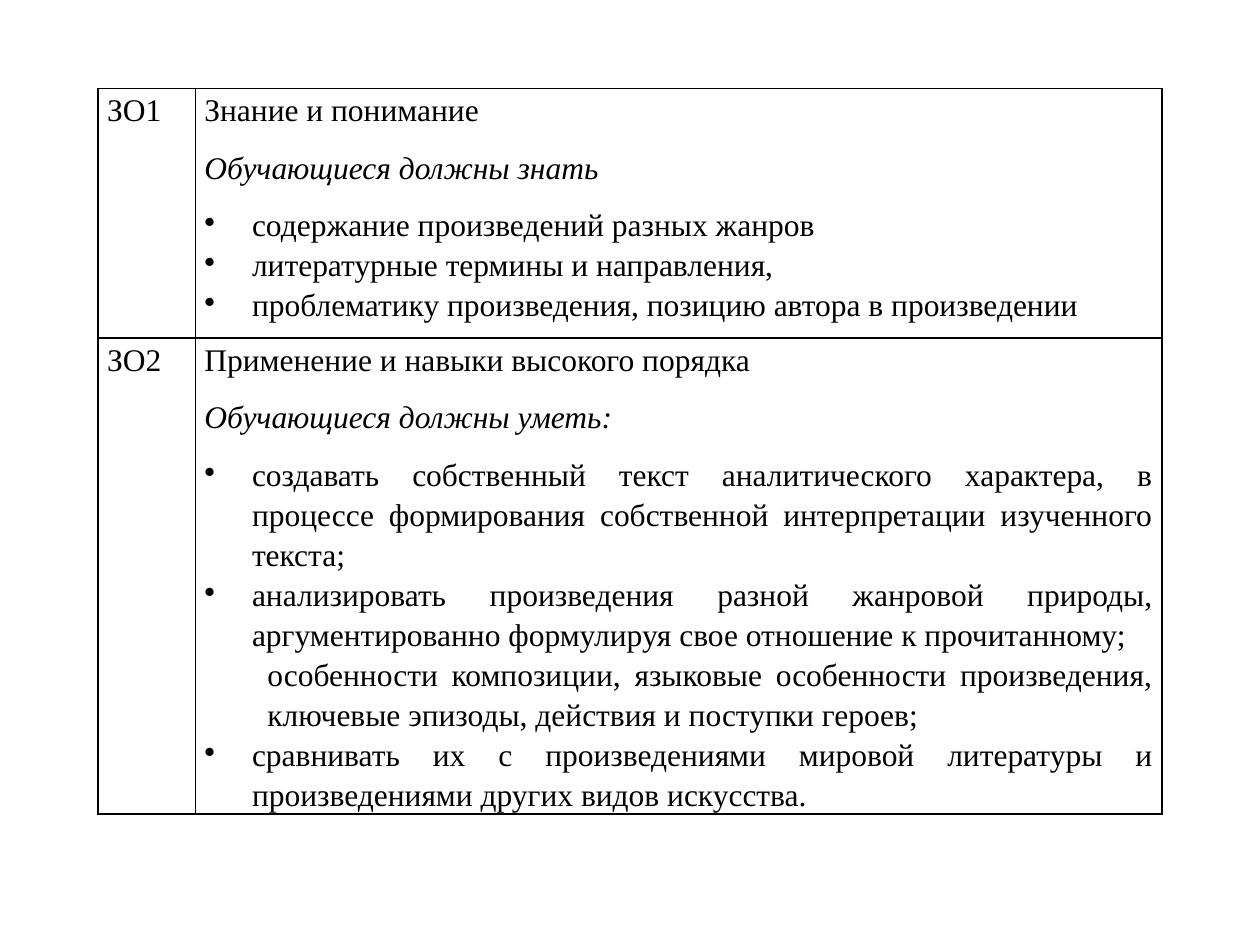
from pptx import Presentation
from pptx import util as u
from pptx.dml.color import RGBColor
from pptx.enum import text
from pptx.oxml import parse_xml
from pptx.oxml.ns import nsdecls

INK = "000000"
INDENT = u.Cm(0.96)


def color(value):
    return RGBColor.from_string(value)


rows = [
    ("ЗО1", [
        ("plain", "Знание и понимание"),
        ("italic", "Обучающиеся должны знать"),
        ("bullet", "содержание произведений разных жанров"),
        ("bullet", "литературные термины и направления,"),
        ("bullet", "проблематику произведения, позицию автора в произведении"),
    ]),
    ("ЗО2", [
        ("plain", "Применение и навыки высокого порядка"),
        ("italic", "Обучающиеся должны уметь:"),
        ("bullet", "создавать собственный текст аналитического характера, в процессе "
                   "формирования собственной интерпретации изученного текста;"),
        ("bullet", "анализировать произведения разной жанровой природы, "
                   "аргументированно формулируя свое отношение к прочитанному;"),
        ("inset", "особенности композиции, языковые особенности произведения, "
                  "ключевые эпизоды, действия и поступки героев;"),
        ("bullet", "сравнивать их с произведениями мировой литературы и "
                   "произведениями других видов искусства."),
    ]),
]

deck = Presentation()
deck.slide_width, deck.slide_height = u.Cm(25.4), u.Cm(19.05)
page = deck.slides.add_slide(deck.slide_layouts[6])

frame = page.shapes.add_table(2, 2, u.Cm(1.98), u.Cm(1.78), u.Cm(21.44), u.Cm(14.1))
table = frame.table
table.first_row = table.horz_banding = False
for column, width in zip(table.columns, (1.96, 19.48)):
    column.width = u.Cm(width)
for row, height in zip(table.rows, (5.03, 9.07)):
    row.height = u.Cm(height)

for row, (code, goals) in zip(table.rows, rows):
    for cell, lines in zip(row.cells, ([("plain", code)], goals)):
        cell.margin_left = cell.margin_right = u.Cm(0.18)
        cell.margin_top = cell.margin_bottom = 0
        cell.fill.background()
        properties = cell._tc.get_or_add_tcPr()
        for place, side in enumerate("LRTB"):
            properties.insert(place, parse_xml(
                f'<a:ln{side} {nsdecls("a")} w="12700"><a:solidFill>'
                f'<a:srgbClr val="{INK}"/></a:solidFill></a:ln{side}>'))

        cell.text_frame.text = "\n".join(line for kind, line in lines)
        for para, (kind, line) in zip(cell.text_frame.paragraphs, lines):
            para.alignment = text.PP_ALIGN.JUSTIFY
            para.line_spacing = 1.15
            para.space_after = u.Pt(10 if kind in ("plain", "italic") else 0)
            layout = para._p.get_or_add_pPr()
            if kind == "bullet":
                layout.set("marL", str(INDENT))
                layout.set("indent", str(-INDENT))
                layout.append(parse_xml(f'<a:buChar {nsdecls("a")} char="•"/>'))
            elif kind == "inset":
                layout.set("marL", str(u.Cm(1.27)))
            for span in para.runs:
                span.font.name = "Times New Roman"
                span.font.size = u.Pt(18)
                span.font.italic = kind == "italic"
                span.font.color.rgb = color(INK)

deck.save("out.pptx")
